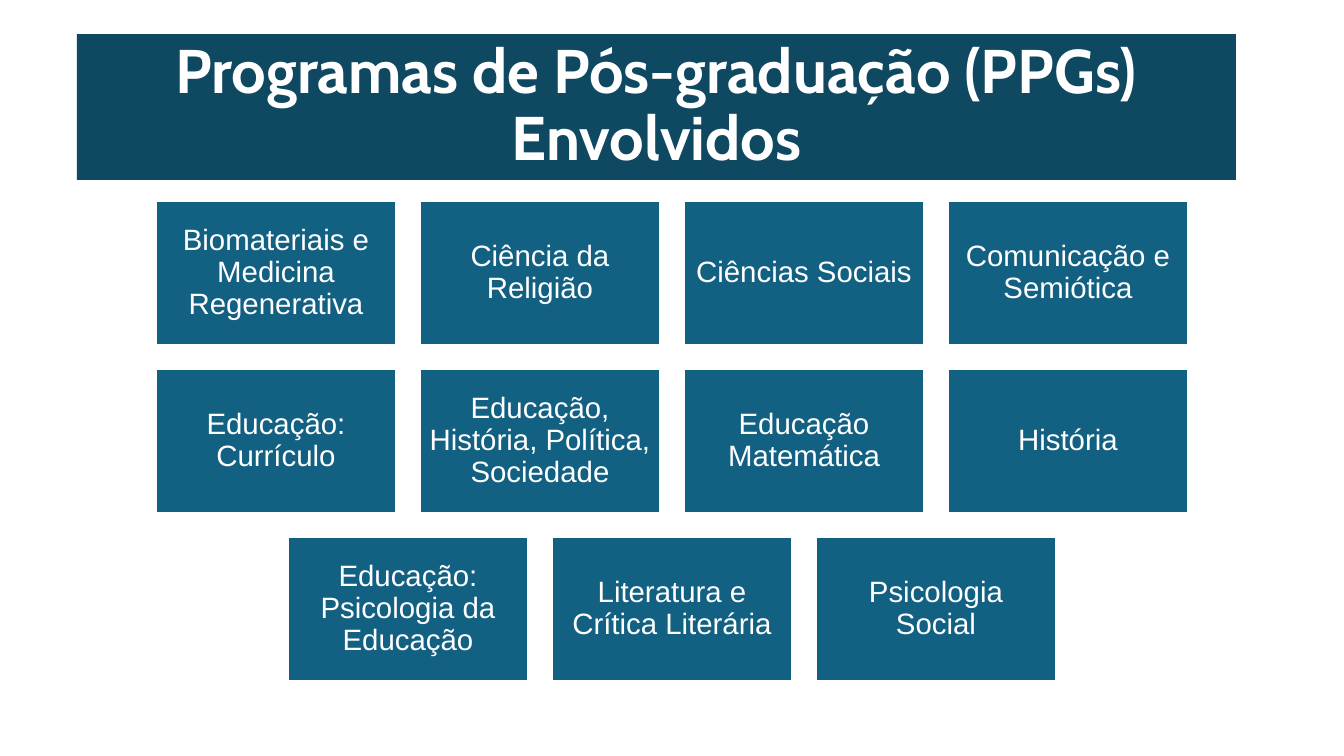
from pptx import Presentation
from pptx.dml.color import RGBColor
from pptx.enum.shapes import MSO_SHAPE
from pptx.enum.text import MSO_ANCHOR, PP_ALIGN
from pptx.util import Pt

RECT = MSO_SHAPE.RECTANGLE
MIDDLE = MSO_ANCHOR.MIDDLE
CENTER = PP_ALIGN.CENTER

WIDE, HIGH = 1344, 756
SCALE = 12192000 / WIDE

THEME = {
    "white": RGBColor.from_string("FFFFFF"),
    "navy": RGBColor.from_string("0F4861"),
    "teal": RGBColor.from_string("126082"),
    "title": 44,
    "card": 21,
}


def px(size):
    return round(size * SCALE)


def add_box(text, left, top, width, height, *, fill, size, font,
            bold=False, pad=(9, 9), edge=0):
    box = slide.shapes.add_shape(RECT, px(left), px(top), px(width), px(height))
    box.shadow.inherit = False
    box.fill.solid()
    box.fill.fore_color.rgb = fill
    if edge:
        box.line.color.rgb = THEME["white"]
        box.line.width = Pt(edge)
    else:
        box.line.fill.background()
    frame = box.text_frame
    frame.word_wrap = True
    frame.vertical_anchor = MIDDLE
    frame.margin_left = frame.margin_right = px(pad[0])
    frame.margin_top = frame.margin_bottom = px(pad[1])
    para = frame.paragraphs[0]
    para.alignment = CENTER
    para.line_spacing = 0.9
    run = para.add_run()
    run.text = text
    run.font.name = font
    run.font.size = Pt(size)
    run.font.bold = bold
    run.font.color.rgb = THEME["white"]


deck = Presentation()
deck.slide_width = px(WIDE)
deck.slide_height = px(HIGH)
slide = deck.slides.add_slide(deck.slide_layouts[6])

add_box("Programas de Pós-graduação (PPGs) Envolvidos", 77, 34, 1159, 146,
        fill=THEME["navy"], size=THEME["title"], font="Cabin", bold=True,
        pad=(10, 5))

ROWS = [
    ["Biomateriais e Medicina Regenerativa", "Ciência da Religião",
     "Ciências Sociais", "Comunicação e Semiótica"],
    ["Educação: Currículo", "Educação, História, Política, Sociedade",
     "Educação Matemática", "História"],
    ["Educação: Psicologia da Educação", "Literatura e Crítica Literária",
     "Psicologia Social"],
]
CARD_W, CARD_H, GAP, TOP = 240, 144, 24, 201

for row, names in enumerate(ROWS):
    span = len(names) * (CARD_W + GAP) - GAP
    start = (WIDE - span) // 2
    for col, name in enumerate(names):
        add_box(name, start + col * (CARD_W + GAP), TOP + row * (CARD_H + GAP),
                CARD_W, CARD_H, fill=THEME["teal"], size=THEME["card"],
                font="Arial", edge=1.5)

deck.save("out.pptx")
